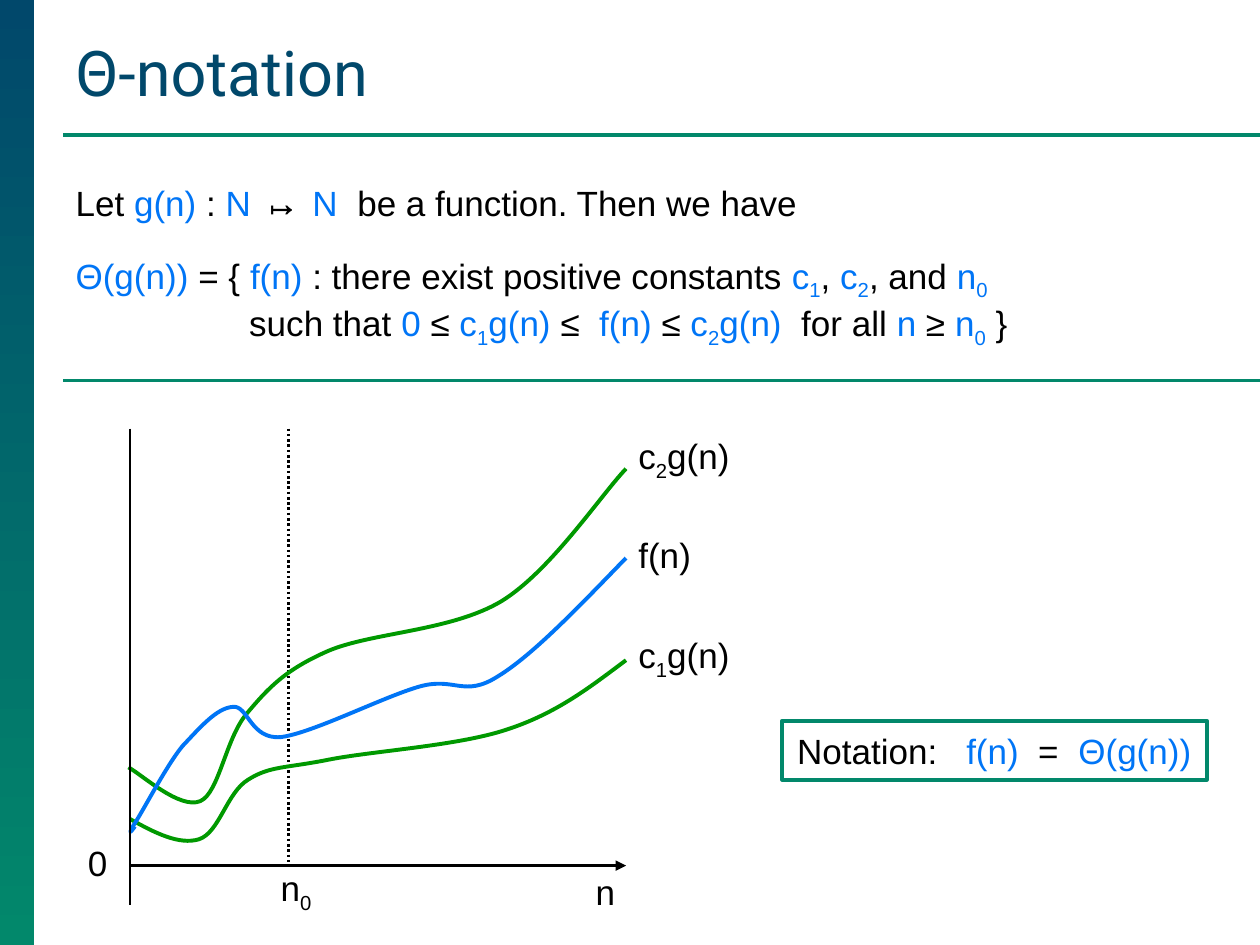
from dataclasses import dataclass
from typing import NamedTuple

from lxml import etree
from pptx import Presentation
from pptx.dml.color import RGBColor
from pptx.enum.dml import MSO_LINE
from pptx.enum.shapes import MSO_CONNECTOR, MSO_SHAPE
from pptx.enum.text import MSO_ANCHOR, MSO_AUTO_SIZE, PP_ALIGN
from pptx.oxml.ns import qn
from pptx.util import Cm, Pt

STRAIGHT = MSO_CONNECTOR.STRAIGHT
RECT = MSO_SHAPE.RECTANGLE
DOTTED = MSO_LINE.ROUND_DOT
LEFT = PP_ALIGN.LEFT
BOTTOM, MIDDLE = MSO_ANCHOR.BOTTOM, MSO_ANCHOR.MIDDLE
NO_FIT = MSO_AUTO_SIZE.NONE


@dataclass(frozen=True)
class Theme:
    navy: RGBColor = RGBColor(0x01, 0x48, 0x6B)
    teal: RGBColor = RGBColor(0x02, 0x88, 0x6B)
    blue: RGBColor = RGBColor(0x00, 0x75, 0xF6)
    green: RGBColor = RGBColor(0x00, 0x99, 0x00)
    black: RGBColor = RGBColor(0, 0, 0)
    title_font: str = "Roboto"
    text_font: str = "Arial"
    symbol_font: str = "Noto Sans Mono"
    title_size: Pt = Pt(36)
    text_size: Pt = Pt(20)
    thin: Pt = Pt(1.5)
    thick: Pt = Pt(2.25)


T = Theme()


class Run(NamedTuple):
    text: str
    color: RGBColor = T.black
    sub: bool = False
    font: str = T.text_font
    size: Pt = T.text_size
    bold: bool = False


class Label(NamedTuple):
    left: float
    top: float
    width: float
    runs: list
    wrap: bool = True


class Curve(NamedTuple):
    color: RGBColor
    points: list  # start, then two controls and an end per segment


def math(text: str) -> Run:
    return Run(text, T.blue)


def indexed(name: str, index: str, color: RGBColor = T.black) -> list:
    return [Run(name, color), Run(index, color, sub=True)]


def add_runs(p, runs: list) -> None:
    for run in runs:
        r = p.add_run()
        r.text = run.text
        r.font.name, r.font.size, r.font.bold = run.font, run.size, run.bold
        r.font.color.rgb = run.color
        if run.sub:
            r._r.get_or_add_rPr().set("baseline", "-25000")


def add_line(s, x1: float, y1: float, x2: float, y2: float,
             color: RGBColor, width: Pt, dash=None, arrow: bool = False) -> None:
    line = s.shapes.add_connector(STRAIGHT, Cm(x1), Cm(y1), Cm(x2), Cm(y2))
    line.line.color.rgb, line.line.width = color, width
    if dash is not None:
        line.line.dash_style = dash
    if arrow:
        etree.SubElement(line.line._get_or_add_ln(), qn("a:tailEnd"), type="triangle")
    etree.SubElement(line._element.spPr, qn("a:effectLst"))


def add_curve(s, curve: Curve) -> None:
    start, *rest = [(Cm(x), Cm(y)) for x, y in curve.points]
    builder = s.shapes.build_freeform(*start)
    builder.add_line_segments(rest, close=False)
    sp = builder.convert_to_shape()
    sp.shadow.inherit = False
    sp.fill.background()
    sp.line.color.rgb, sp.line.width = curve.color, T.thick
    # Every three points become one Bézier segment
    path = next(sp._element.iter(qn("a:path")))
    segments = path.findall(qn("a:lnTo"))
    for i in range(0, len(segments), 3):
        bezier = etree.SubElement(path, qn("a:cubicBezTo"))
        for segment in segments[i:i + 3]:
            bezier.append(segment[0])
            path.remove(segment)


def add_label(s, label: Label) -> None:
    sp = s.shapes.add_textbox(Cm(label.left), Cm(label.top), Cm(label.width), Cm(1.09))
    sp.text_frame.word_wrap = label.wrap
    add_runs(sp.text_frame.paragraphs[0], label.runs)


def place(sp, left: float, top: float, width: float, height: float) -> None:
    sp.left, sp.top, sp.width, sp.height = Cm(left), Cm(top), Cm(width), Cm(height)


def add_definition(s) -> None:
    body = s.placeholders[1]
    place(body, 1.27, 3.53, 23.19, 14)
    tf = body.text_frame
    tf.auto_size = NO_FIT
    intro, p = tf.paragraphs[0], tf.add_paragraph()
    for para, before, hang in ((intro, 0, 0), (p, 17.5, 3.5)):
        pPr = para._p.get_or_add_pPr()
        pPr.set("marL", str(Cm(hang)))
        pPr.set("indent", str(-Cm(hang)))
        etree.SubElement(pPr, qn("a:buNone"))
        para.space_before = Pt(before)

    add_runs(intro, [Run("Let"), math(" g(n) "), Run(":"), math(" N "),
                     Run("↦", font=T.symbol_font, bold=True), math(" N "),
                     Run(" be a function. Then we have")])
    add_runs(p, [math("Θ(g(n))"), Run(" = { "), math("f(n)"),
                 Run(" : there exist positive constants "),
                 *indexed("c", "1", T.blue), Run(", "), *indexed("c", "2", T.blue),
                 Run(", and "), *indexed("n", "0", T.blue)])
    p.add_line_break()
    add_runs(p, [Run("such that "), math("0 "), Run("≤"),
                 *indexed(" c", "1", T.blue), math("g(n) "), Run("≤ "), math(" f(n) "),
                 Run("≤"), *indexed(" c", "2", T.blue), math("g(n) "),
                 Run(" for all "), math("n"), Run(" ≥ "),
                 *indexed("n", "0", T.blue), Run(" }")])


def add_notation(s) -> None:
    sp = s.shapes.add_shape(RECT, Cm(15.77), Cm(14.53), Cm(8.56), Cm(1.19))
    sp.shadow.inherit = False
    sp.fill.background()
    sp.line.color.rgb, sp.line.width = T.teal, T.thick
    tf = sp.text_frame
    tf.vertical_anchor = MIDDLE
    tf.word_wrap = True
    tf.margin_left, tf.margin_right = Cm(0.3), 0
    p = tf.paragraphs[0]
    p.alignment = LEFT
    tabs = etree.SubElement(p._p.get_or_add_pPr(), qn("a:tabLst"))
    for stop in (3.41, 4.86, 5.67):
        etree.SubElement(tabs, qn("a:tab"), pos=str(Cm(stop)), algn="l")
    add_runs(p, [Run("Notation:\t"), math("f(n)"), Run("\t=\t"), math("Θ(g(n))")])


AXIS_X, AXIS_Y, AXIS_END, TOP, N0_X = 2.62, 17.45, 12.62, 8.64, 5.82

CURVES = [
    Curve(T.green, [(2.62, 16.51), (3.12, 16.79), (3.61, 17.04), (4.01, 16.92),
                    (4.42, 16.79), (4.57, 15.98), (5, 15.72), (5.44, 15.44),
                    (5.74, 15.49), (6.6, 15.32), (7.49, 15.14), (9.22, 15.04),
                    (10.21, 14.71), (11.23, 14.38), (11.91, 13.84), (12.62, 13.31)]),
    Curve(T.green, [(2.59, 15.47), (2.84, 15.6), (3.63, 16.33), (4.04, 16.15),
                    (4.42, 15.98), (4.55, 14.88), (4.98, 14.38), (5.41, 13.87),
                    (5.74, 13.51), (6.6, 13.13), (7.47, 12.75), (9.09, 12.73),
                    (10.11, 12.12), (11.1, 11.51), (12.09, 10.01), (12.62, 9.45)]),
    Curve(T.blue, [(2.72, 16.66), (2.72, 16.66), (2.54, 16.92), (2.69, 16.64),
                   (2.87, 16.38), (3.35, 15.44), (3.68, 15.04), (4.04, 14.66),
                   (4.37, 14.27), (4.7, 14.25), (5, 14.22), (5.05, 14.91),
                   (5.66, 14.86), (6.3, 14.78), (7.72, 14.05), (8.46, 13.84),
                   (9.17, 13.64), (9.35, 14.07), (10.03, 13.64), (10.74, 13.21),
                   (11.68, 12.22), (12.62, 11.25)]),
]
LABELS = [
    Label(11.76, 17.42, 0.91, [Run("n")], wrap=False),
    Label(5.41, 17.35, 1.6, indexed("n", "0")),
    Label(AXIS_END, 12.65, 4.19, [*indexed("c", "1"), Run("g(n)")]),
    Label(AXIS_END, TOP, 5, [*indexed("c", "2"), Run("g(n)")]),
    Label(AXIS_END, 10.64, 4.6, [Run("f(n)")]),
    Label(1.52, 16.84, 0.91, [Run("0")], wrap=False),
]


def main() -> None:
    prs = Presentation()
    prs.slide_width, prs.slide_height = Cm(25.4), Cm(19.05)
    s = prs.slides.add_slide(prs.slide_layouts[1])

    # Side band and rules
    band = s.shapes.add_shape(RECT, 0, 0, Cm(0.69), prs.slide_height)
    band.shadow.inherit = False
    band.line.fill.background()
    band.fill.gradient()
    band.fill.gradient_angle = 270
    for stop, color in zip(band.fill.gradient_stops, (T.navy, T.teal)):
        stop.color.rgb = color
    for y in (2.72, 7.67):
        add_line(s, 1.27, y, 25.4, y, T.teal, T.thick)

    # Title and definition
    title = s.shapes.title
    place(title, 1.27, 0.53, 23.57, 1.8)
    title.text_frame.auto_size = NO_FIT
    title.text_frame.vertical_anchor = BOTTOM
    p = title.text_frame.paragraphs[0]
    p.alignment = LEFT
    add_runs(p, [Run("Θ-notation", T.navy, font=T.title_font, size=T.title_size)])
    add_definition(s)

    # Growth diagram
    add_line(s, AXIS_X, AXIS_Y, AXIS_END, AXIS_Y, T.black, T.thin, arrow=True)
    add_line(s, N0_X, TOP, N0_X, AXIS_Y, T.black, T.thin, dash=DOTTED)
    for curve in CURVES:
        add_curve(s, curve)
    for label in LABELS:
        add_label(s, label)
    add_line(s, AXIS_X, TOP, AXIS_X, 18.24, T.black, T.thin)

    add_notation(s)
    prs.save("out.pptx")


if __name__ == "__main__":
    main()
